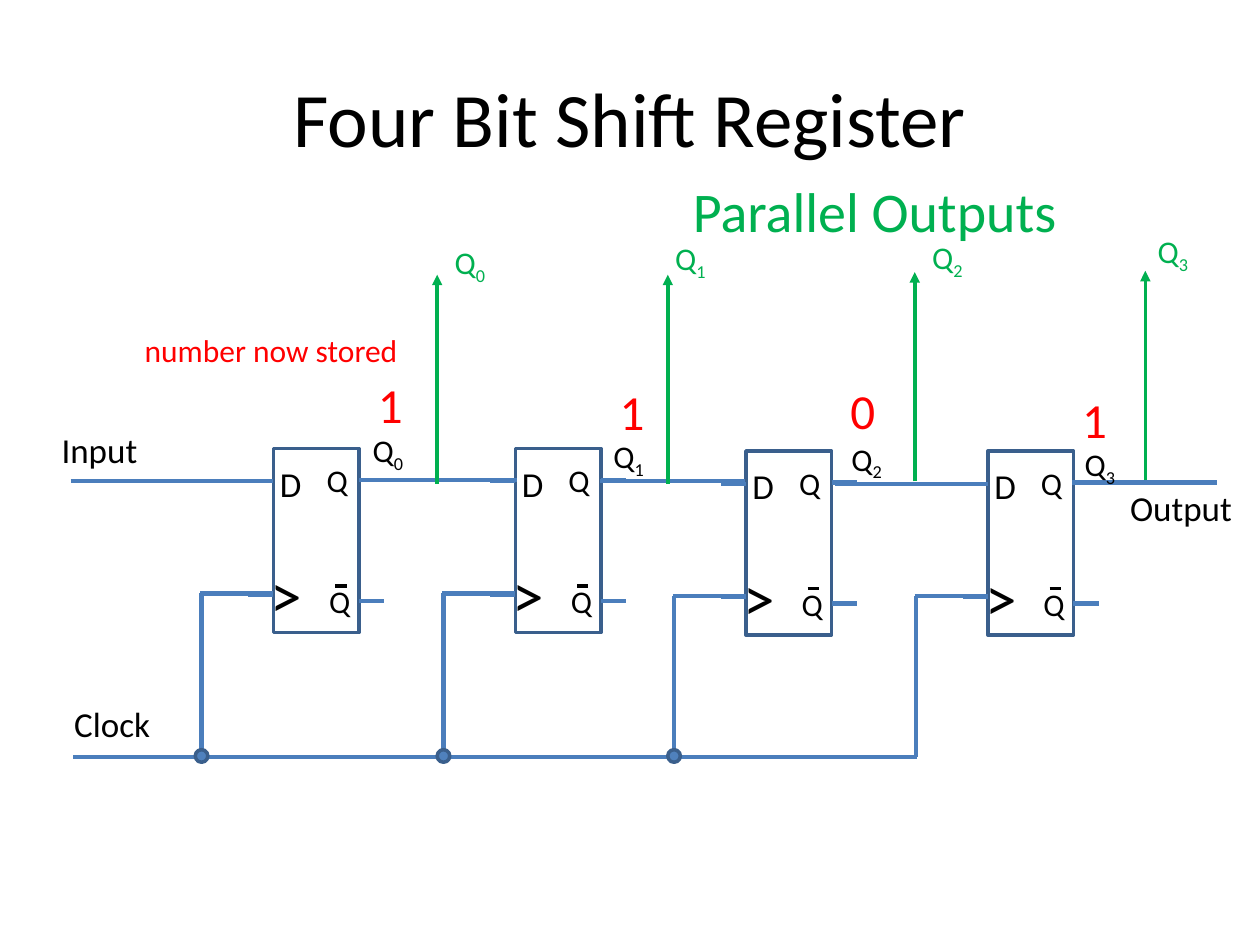
"""Build the four bit shift register slide."""
from dataclasses import dataclass

from lxml.etree import SubElement
from pptx import Presentation
from pptx.dml.color import RGBColor
from pptx.enum.shapes import MSO_CONNECTOR, MSO_SHAPE
from pptx.enum.text import MSO_ANCHOR, MSO_AUTO_SIZE, PP_ALIGN
from pptx.oxml.ns import qn
from pptx.slide import Slide
from pptx.util import Inches, Pt

BLACK = RGBColor(0x00, 0x00, 0x00)
WHITE = RGBColor(0xFF, 0xFF, 0xFF)
RED = RGBColor(0xFF, 0x00, 0x00)
GREEN = RGBColor(0x00, 0xB0, 0x50)
WIRE = RGBColor(0x4B, 0x7E, 0xBC)
OUTLINE = RGBColor(0x3A, 0x5F, 0x8C)
DOT = RGBColor(0x4F, 0x81, 0xBD)
FONT = "Calibri"

Point = tuple[float, float]
BOX_W, BOX_H = 0.68, 1.46
CLOCK_Y = 6.01
RISER_GAP = 0.57
DOT_SIZE = 0.1


@dataclass
class Stage:
    """One flip-flop with its stored bit and parallel output."""
    x: float
    y: float
    bit: str
    bit_at: Point
    name_at: Point
    tap_x: float
    tap_y: float
    output_at: Point


@dataclass
class Label:
    """A free-standing caption."""
    text: str
    at: Point
    width: float
    height: float
    size: int
    color: RGBColor = BLACK


STAGES = [
    Stage(2.17, 3.56, "1", (2.9, 2.92), (2.86, 3.37), 3.47, 2.18, (3.51, 1.88)),
    Stage(4.09, 3.56, "1", (4.82, 2.98), (4.77, 3.42), 5.3, 2.18, (5.26, 1.85)),
    Stage(5.92, 3.58, "0", (6.65, 2.97), (6.66, 3.44), 7.26, 2.16, (7.3, 1.84)),
    Stage(7.84, 3.58, "1", (8.49, 3.04), (8.51, 3.48), 9.09, 2.15, (9.09, 1.79)),
]
LABELS = [
    Label("Clock", (0.49, 5.53), 0.85, 0.44, 20),
    Label("Input", (0.39, 3.35), 0.85, 0.44, 20),
    Label("Output", (8.87, 3.81), 1.09, 0.44, 20),
    Label("number now stored", (1.05, 2.58), 2.87, 0.4, 18, RED),
    Label("Parallel Outputs", (5.4, 1.35), 3.42, 0.64, 32, GREEN),
]
DATA_WIRES = [
    ((0.56, 3.82), (2.16, 3.82)),
    ((2.85, 3.81), (4.1, 3.81)),
    ((4.76, 3.82), (5.91, 3.82)),
    ((6.63, 3.84), (7.78, 3.84)),
    ((8.51, 3.83), (9.66, 3.83)),
]


def add_line(s: Slide, start: Point, end: Point, color: RGBColor = WIRE,
             width: float = 2.5, arrow: bool = False) -> None:
    """Draw a straight line, with an arrowhead at its end if asked."""
    sp = s.shapes.add_connector(
        MSO_CONNECTOR.STRAIGHT, *(Inches(v) for v in (*start, *end)))
    sp.line.color.rgb = color
    sp.line.width = Pt(width)
    if arrow:
        SubElement(sp.line._get_or_add_ln(), qn("a:tailEnd"), type="triangle")
    SubElement(sp._element.spPr, qn("a:effectLst"))


def add_text(s: Slide, label: Label, subscript: str = "") -> None:
    """Draw a caption with an optional subscript."""
    sp = s.shapes.add_textbox(
        *(Inches(v) for v in (*label.at, label.width, label.height)))
    tf = sp.text_frame
    tf.word_wrap = True
    tf.auto_size = MSO_AUTO_SIZE.SHAPE_TO_FIT_TEXT
    p = tf.paragraphs[0]
    p.font.size = Pt(label.size)
    p.font.name = FONT
    p.font.color.rgb = label.color
    p.add_run().text = label.text
    if subscript:
        r = p.add_run()
        r.text = subscript
        r.font._element.set("baseline", "-25000")


def add_shape(s: Slide, kind: MSO_SHAPE, at: Point, width: float,
              height: float, fill: RGBColor) -> None:
    """Draw an outlined shape."""
    sp = s.shapes.add_shape(kind, *(Inches(v) for v in (*at, width, height)))
    sp.shadow.inherit = False
    sp.fill.solid()
    sp.fill.fore_color.rgb = fill
    sp.line.color.rgb = OUTLINE
    sp.line.width = Pt(2)


def add_flip_flop(s: Slide, stage: Stage) -> None:
    """Draw a flip-flop box with its pins and pin names."""
    x, y = stage.x, stage.y
    right = x + BOX_W
    add_shape(s, MSO_SHAPE.RECTANGLE, (x, y), BOX_W, BOX_H, WHITE)
    add_text(s, Label("D", (x - 0.03, y + 0.06), 0.18, 0.44, 20))
    add_text(s, Label(">", (x - 0.12, y + 0.8), 0.33, 0.42, 36))
    add_text(s, Label("Q", (x + 0.34, y + 0.05), 0.18, 0.4, 18))
    add_text(s, Label("Q", (x + 0.36, y + 1.01), 0.18, 0.4, 18))
    add_line(s, (x + 0.49, y + 1.09), (x + 0.58, y + 1.09), BLACK, 2)
    for length, width in ((0.11, 0.75), (0.2, 2.5)):
        for pin_y in (y + 0.26, y + 1.16):
            add_line(s, (x - length, pin_y), (x, pin_y), WIRE, width)
        for pin_y in (y + 0.25, y + 1.21):
            add_line(s, (right, pin_y), (right + length, pin_y), WIRE, width)


def add_clock(s: Slide) -> None:
    """Draw the clock line with a riser to each flip-flop."""
    risers = [stage.x - RISER_GAP for stage in STAGES]
    add_line(s, (0.58, CLOCK_Y), (risers[-1] + 0.01, CLOCK_Y))
    for x, stage in zip(risers, STAGES):
        pin_y = stage.y + 1.15
        add_line(s, (x, CLOCK_Y), (x, pin_y))
        add_line(s, (x - 0.01, pin_y), (stage.x, pin_y))
    for x in risers[:-1]:
        add_shape(s, MSO_SHAPE.OVAL, (x - DOT_SIZE / 2, CLOCK_Y - 0.06),
                  DOT_SIZE, DOT_SIZE, DOT)


def add_title(s: Slide, text: str) -> None:
    """Place and format the slide title."""
    sp = s.shapes.title
    sp.left, sp.top, sp.width, sp.height = (
        Inches(v) for v in (0.5, 0.3, 9, 1.25))
    tf = sp.text_frame
    tf.text = text
    tf.vertical_anchor = MSO_ANCHOR.MIDDLE
    p = tf.paragraphs[0]
    p.alignment = PP_ALIGN.CENTER
    p.font.size = Pt(44)
    p.font.name = FONT
    p.font.color.rgb = BLACK


def main() -> None:
    """Build and save the slide."""
    prs = Presentation()
    prs.slide_width, prs.slide_height = Inches(10), Inches(7.5)
    s = prs.slides.add_slide(prs.slide_layouts[5])
    add_title(s, "Four Bit Shift Register")
    for stage in STAGES:
        add_flip_flop(s, stage)
    for start, end in DATA_WIRES:
        add_line(s, start, end)
    add_clock(s)
    for i, stage in enumerate(STAGES):
        add_text(s, Label("Q", stage.name_at, 0.47, 0.4, 18), str(i))
        add_text(s, Label(stage.bit, stage.bit_at, 0.43, 0.57, 28, RED))
        add_line(s, (stage.tap_x, stage.tap_y + 1.66),
                 (stage.tap_x, stage.tap_y), GREEN, 2, arrow=True)
        add_text(s, Label("Q", stage.output_at, 0.47, 0.4, 18, GREEN), str(i))
    for label in LABELS:
        add_text(s, label)
    prs.save("out.pptx")


if __name__ == "__main__":
    main()
